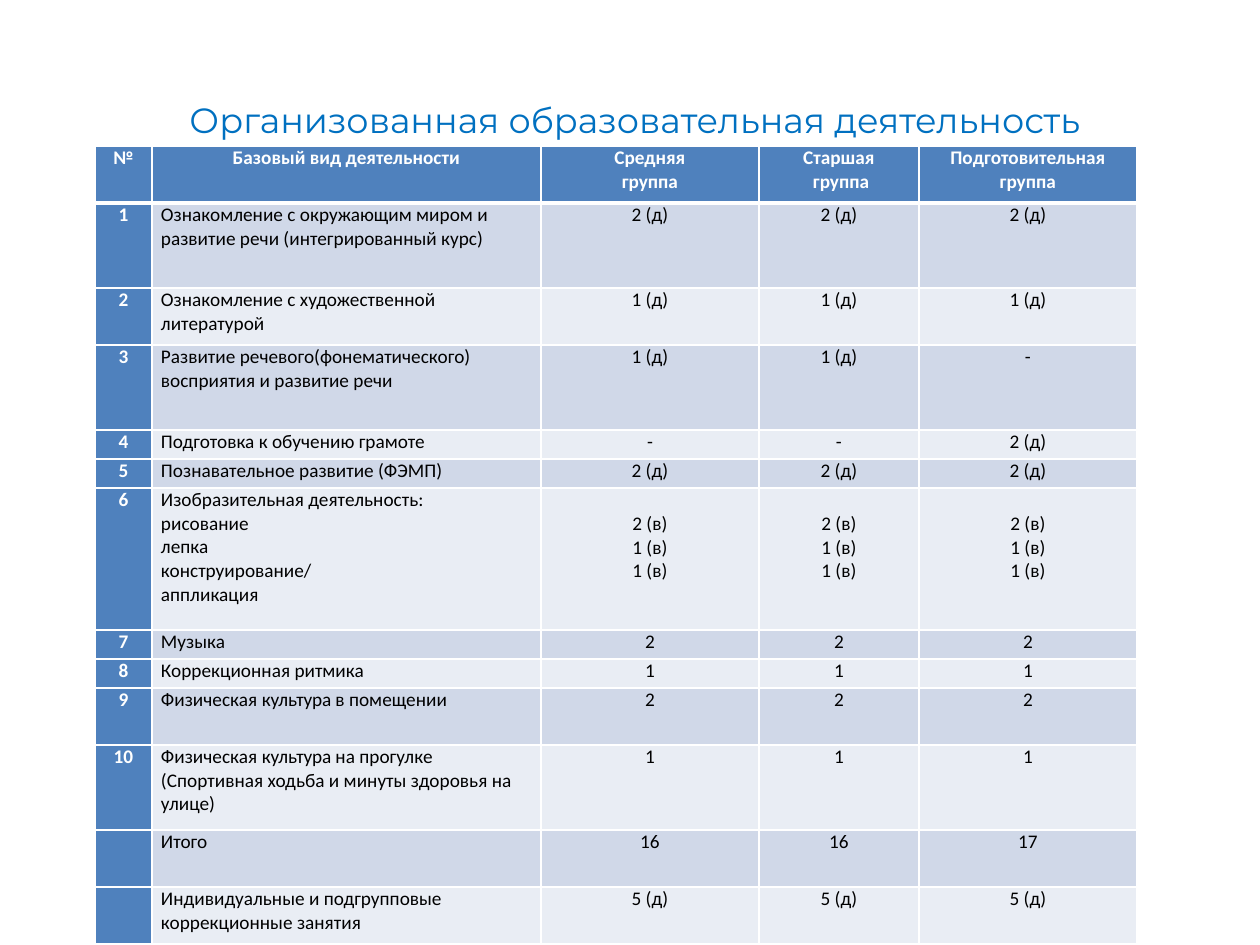
from lxml import etree
from pptx import Presentation
from pptx import util as u
from pptx.dml.color import RGBColor
from pptx.enum import text
from pptx.oxml.ns import qn

PX = u.Inches(1) / 126
COLORS = {
    "title": "0070C0", "accent": "4F81BD", "band_dark": "D0D8E8",
    "band_light": "E9EDF4", "white": "FFFFFF", "black": "000000",
}
COL_WIDTHS = [57, 389, 218, 160, 218]
ROW_HEIGHTS = [57, 85, 57, 85, 29, 29, 142, 29, 29, 57, 85, 57, 57]
LINE = 24
TIGHT = "культура "

# A cell is a list of paragraphs, a paragraph is a list of runs.
HEADER = [
    [["№"]],
    [["Базовый вид деятельности"]],
    [["Средняя"], ["группа"]],
    [["Старшая"], [" группа"]],
    [["Подготовительная группа"]],
]
ART_HOURS = "2 (в)", "1 (в)", "1 (в)"
ACTIVITIES = [
    ("1", [["Ознакомление с окружающим миром и развитие речи (интегрированный курс)"]],
     ["2 (д)"] * 3),
    ("2", [["Ознакомление с художественной литературой"]], ["1 (д)"] * 3),
    ("3", [["Развитие речевого(фонематического) восприятия и развитие речи"]],
     ["1 (д)", "1 (д)", "-"]),
    ("4", [["Подготовка к обучению грамоте"]], ["-", "-", "2 (д)"]),
    ("5", [["Познавательное развитие (ФЭМП)"]], ["2 (д)"] * 3),
    ("6", [["Изобразительная деятельность:"], ["рисование"], ["лепка"],
           ["конструирование/"], ["аппликация"]], [ART_HOURS] * 3),
    ("7", [["Музыка"]], ["2"] * 3),
    ("8", [["Коррекционная ритмика"]], ["1"] * 3),
    ("9", [["Физическая ", TIGHT, "в помещении"]], ["2"] * 3),
    ("10", [["Физическая ", TIGHT,
             "на прогулке (Спортивная ходьба и минуты здоровья на улице)"]], ["1"] * 3),
    ("", [["Итого"]], ["16", "16", "17"]),
    ("", [["Индивидуальные и подгрупповые коррекционные занятия"]], ["5 (д)"] * 3),
]


def px(n):
    return u.Emu(round(n * PX))


def rgb(name):
    return RGBColor.from_string(COLORS[name])


def add_run(p, content, size, font, color, bold=False):
    r = p.add_run()
    r.text = content
    r.font.size, r.font.name, r.font.bold = u.Pt(size), font, bold
    r.font.color.rgb = rgb(color)
    return r


def add_title(s, content):
    sp = s.shapes.title
    sp.left, sp.top, sp.width, sp.height = px(64), px(37), px(1142), px(208)
    tf = sp.text_frame
    tf.vertical_anchor = text.MSO_ANCHOR.MIDDLE
    tf.margin_bottom = px(49)  # lifts the line clear of the table
    p = tf.paragraphs[0]
    p.alignment = text.PP_ALIGN.CENTER
    add_run(p, content, 20, "Montserrat", "title")


def set_borders(cell, top, bottom):
    """White cell borders; top and bottom widths in points."""
    tc_pr = cell._tc.get_or_add_tcPr()
    for side, width in (("L", 1), ("R", 1), ("T", top), ("B", bottom)):
        ln = etree.SubElement(tc_pr, qn(f"a:ln{side}"), w=str(u.Pt(width)))
        fill = etree.SubElement(ln, qn("a:solidFill"))
        etree.SubElement(fill, qn("a:srgbClr"), val=COLORS["white"])


def fill_cell(cell, paragraphs, fill, strong, centered):
    cell.margin_left = cell.margin_right = px(9)
    cell.margin_top = cell.margin_bottom = 0
    cell.fill.solid()
    cell.fill.fore_color.rgb = rgb(fill)
    tf = cell.text_frame
    for i, runs in enumerate(paragraphs):
        p = tf.add_paragraph() if i else tf.paragraphs[0]
        p.alignment = text.PP_ALIGN.CENTER if centered else text.PP_ALIGN.LEFT
        for content in runs:
            r = add_run(p, content, 11, "Calibri", "white" if strong else "black", strong)
            if content == TIGHT:
                r._r.get_or_add_rPr().set("spc", "-10")


def table_rows():
    """Header and activities, all as lists of cells."""
    rows = [HEADER]
    for number, activity, hours in ACTIVITIES:
        counts = [[[h]] if isinstance(h, str) else [[n] for n in h] for h in hours]
        rows.append([[[number]] if number else [], activity, *counts])
    return rows


def add_schedule(s):
    frame = s.shapes.add_table(len(ROW_HEIGHTS), len(COL_WIDTHS), px(95), px(146),
                               px(sum(COL_WIDTHS)), px(sum(ROW_HEIGHTS)))
    table = frame.table
    for col, width in zip(table.columns, COL_WIDTHS):
        col.width = px(width)
    for row, height in zip(table.rows, ROW_HEIGHTS):
        row.height = px(height)
    for i, cells in enumerate(table_rows()):
        band = "band_dark" if i % 2 else "band_light"
        for j, paragraphs in enumerate(cells):
            cell = table.cell(i, j)
            strong = i == 0 or j == 0
            set_borders(cell, 3 if i == 1 else 1, 3 if i == 0 else 1)
            fill_cell(cell, paragraphs, "accent" if strong else band, strong,
                      strong or j > 1)
            if j > 1 and len(paragraphs) == len(ART_HOURS):
                cell.margin_top = px(LINE)  # hours start beside the second line


def main():
    prs = Presentation()
    prs.slide_width, prs.slide_height = u.Inches(10), u.Inches(7.5)
    s = prs.slides.add_slide(prs.slide_layouts[5])
    add_title(s, "Организованная образовательная деятельность")
    add_schedule(s)
    prs.save("out.pptx")


if __name__ == "__main__":
    main()
